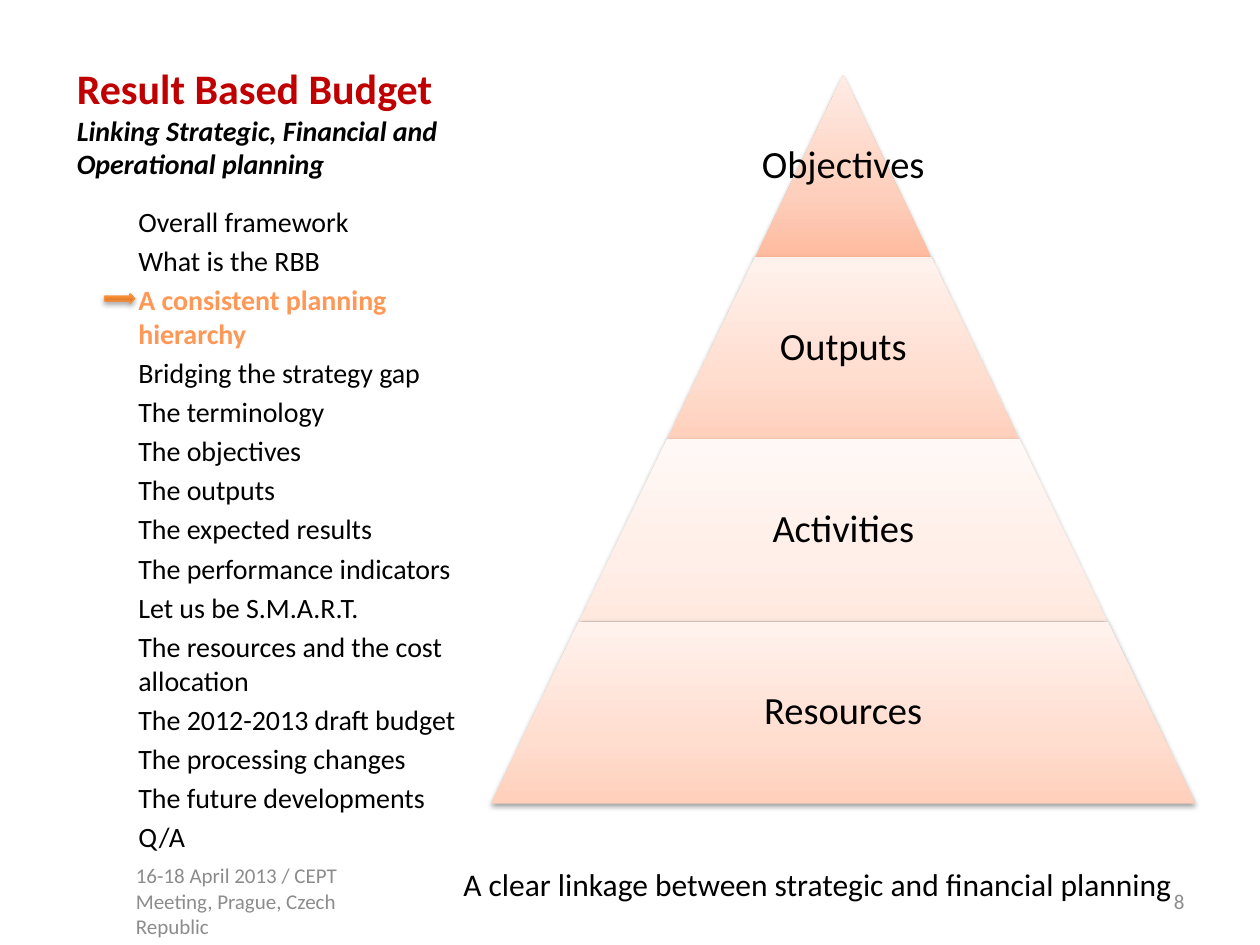
from lxml import etree
from pptx import Presentation
from pptx import util as u
from pptx.dml.color import RGBColor
from pptx.enum import shapes, text
from pptx.oxml.ns import nsdecls, qn

COLORS = {"title": "C00000", "ink": "000000", "current": "FF9856",
          "muted": "8C8C8C", "arrow_line": "F69240"}
GRADIENTS = {
    "apex": [(0, "FFBB9F"), (35, "FDCFBC"), (100, "FFECE5")],
    "warm": [(0, "FFD0BB"), (35, "FFDDCF"), (100, "FFF2ED")],
    "pale": [(0, "FFE9DF"), (35, "FFEFE8"), (100, "FFF8F6")],
    "arrow": [(0, "CC6E20"), (80, "FF9034"), (100, "FF9136")],
}
TOPICS = [
    "Overall framework", "What is the RBB", "A consistent planning hierarchy",
    "Bridging the strategy gap", "The terminology", "The objectives",
    "The outputs", "The expected results", "The performance indicators",
    "Let us be S.M.A.R.T.", "The resources and the cost allocation",
    "The 2012-2013 draft budget", "The processing changes",
    "The future developments", "Q/A",
]
CURRENT_TOPIC = 2
TIERS = [("Objectives", "apex"), ("Outputs", "warm"),
         ("Activities", "pale"), ("Resources", "warm")]


class Deck:
    font = "Calibri"

    def __init__(self, width, height):
        self.prs = Presentation()
        self.prs.slide_width, self.prs.slide_height = u.Cm(width), u.Cm(height)
        self.s = self.prs.slides.add_slide(self.prs.slide_layouts[6])

    def run(self, p, words, size, color="ink", **formats):
        r = p.add_run()
        r.text = words
        formats.update(name=self.font, size=u.Pt(size))
        for key, value in formats.items():
            setattr(r.font, key, value)
        r.font.color.rgb = RGBColor.from_string(COLORS[color])

    def box(self, x, y, w, h, **formats):
        tf = self.s.shapes.add_textbox(*map(u.Cm, (x, y, w, h))).text_frame
        tf.word_wrap = True
        for key, value in formats.items():
            setattr(tf, key, value)
        return tf

    def line(self, tf, words, size, color="ink", bold=False, **formats):
        p = tf.paragraphs[0] if not tf.text else tf.add_paragraph()
        for key, value in formats.items():
            setattr(p, key, value)
        self.run(p, words, size, color, bold=bold)
        return p

    def shape(self, kind, x, y, w, h, gradient, shadow, adjust=None, line=None):
        sp = self.s.shapes.add_shape(kind, *map(u.Cm, (x, y, w, h)))
        if adjust is not None:
            sp.adjustments[0] = adjust
        if line:
            sp.line.color.rgb = RGBColor.from_string(COLORS[line])
            sp.line.width = u.Pt(0.75)
        else:
            sp.line.fill.background()
        # Gradient running upwards from the bottom edge
        stops = "".join(
            f'<a:gs pos="{pos * 1000}"><a:srgbClr val="{color}"/></a:gs>'
            for pos, color in GRADIENTS[gradient])
        sp._element.spPr.find(qn("a:prstGeom")).addnext(etree.fromstring(
            f'<a:gradFill {nsdecls("a")} rotWithShape="1"><a:gsLst>{stops}'
            '</a:gsLst><a:lin ang="16200000" scaled="0"/></a:gradFill>'))
        # Soft shadow below
        alpha, distance = shadow
        sp._element.spPr.append(etree.fromstring(
            f'<a:effectLst {nsdecls("a")}><a:outerShdw blurRad="{u.Pt(3.1)}" '
            f'dist="{u.Pt(distance)}" dir="5400000" rotWithShape="0">'
            f'<a:srgbClr val="000000"><a:alpha val="{alpha * 1000}"/>'
            '</a:srgbClr></a:outerShdw></a:effectLst>'))


def main():
    deck = Deck(25.4, 19.05)
    middle = text.MSO_ANCHOR.MIDDLE

    # Title and subtitle
    tf = deck.box(1.3, 0.53, 8.36, 3.23, vertical_anchor=text.MSO_ANCHOR.BOTTOM)
    p = deck.line(tf, "Result Based Budget", 24, "title", bold=True)
    p.add_line_break()
    deck.run(p, "Linking Strategic, Financial and Operational planning", 16,
             bold=True, italic=True)

    # Agenda, with the current topic highlighted
    tf = deck.box(1.27, 3.99, 8.36, 13.03)
    for i, topic in enumerate(TOPICS):
        now = i == CURRENT_TOPIC
        p = deck.line(tf, topic, 16, "current" if now else "ink", bold=now,
                      space_before=u.Pt(3.2 if i else 0))
        p._p.get_or_add_pPr().set("marL", str(u.Cm(1.27)))
    deck.shape(shapes.MSO_SHAPE.RIGHT_ARROW, 2.11, 5.92, 0.61, 0.2, "arrow",
               (35, 1.8), line="arrow_line")

    # Pyramid: each tier is one step wider than the tier above
    center, top, step, height = 17, 1.52, 3.55, 3.67
    for i, (label, gradient) in enumerate(TIERS):
        w, y = step * (i + 1), top + height * i
        deck.shape(shapes.MSO_SHAPE.TRAPEZOID, center - w / 2, y, w, height,
                   gradient, (38, 1.6), adjust=step / 2 / min(w, height))
        label_w = max(step, 0.65 * w)
        margins = {f"margin_{side}": u.Cm(0.08)
                   for side in ("left", "top", "right", "bottom")}
        tf = deck.box(center - label_w / 2, y, label_w, height,
                      vertical_anchor=middle, **margins)
        deck.line(tf, label, 22, alignment=text.PP_ALIGN.CENTER,
                  line_spacing=0.9)

    # Caption
    tf = deck.box(9.09, 17.32, 15.19, 1.02)
    deck.line(tf, "A clear linkage between strategic and financial planning", 18)

    # Footer and slide number
    tf = deck.box(2.49, 17.65, 5.92, 1.02, vertical_anchor=middle)
    deck.line(tf, "16-18 April 2013 / CEPT Meeting, Prague, Czech Republic", 12,
              "muted")
    tf = deck.box(18.21, 17.65, 5.92, 1.02, vertical_anchor=middle)
    deck.line(tf, "8", 12, "muted", alignment=text.PP_ALIGN.RIGHT)

    deck.prs.save("out.pptx")


if __name__ == "__main__":
    main()
